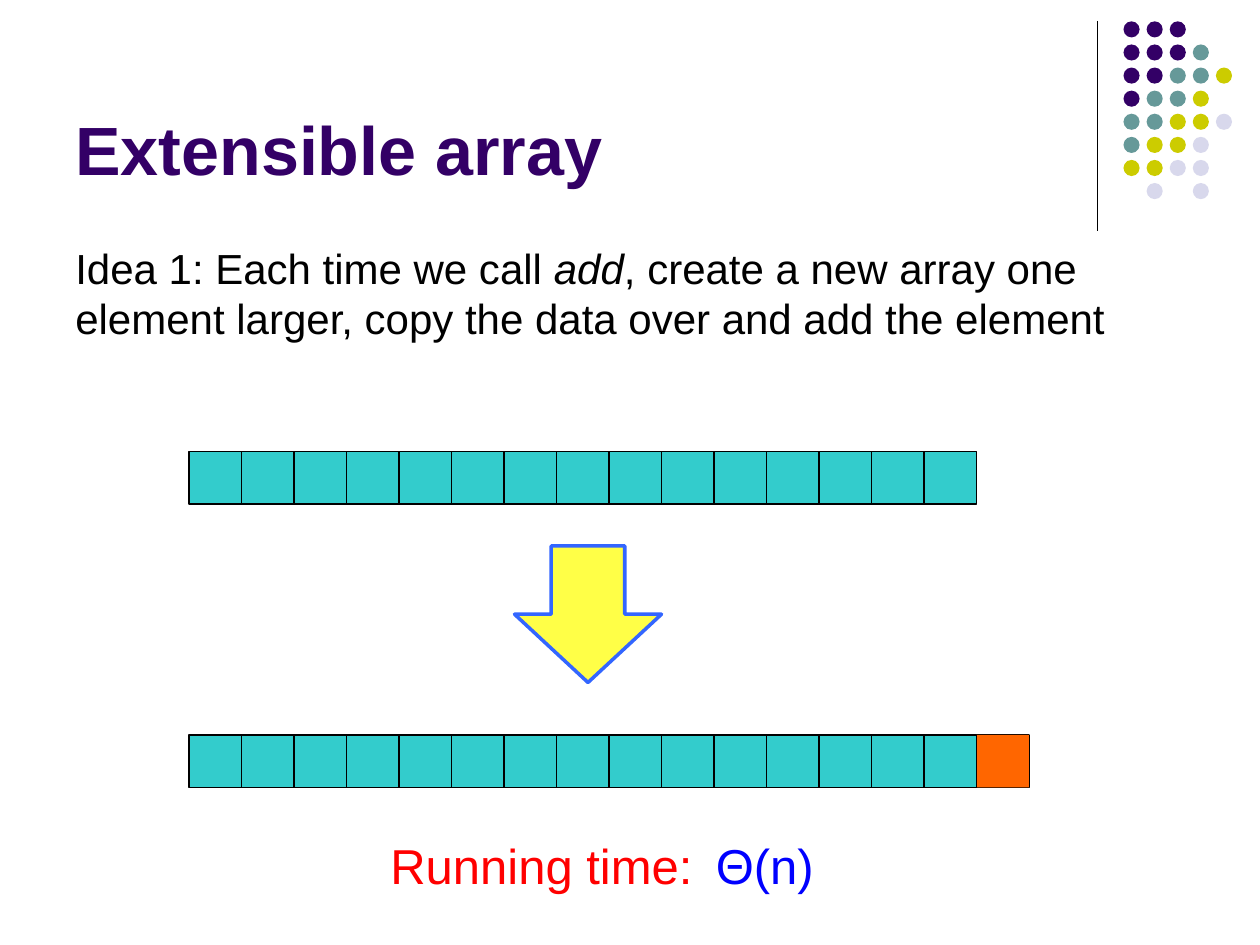
from pptx import Presentation
from pptx.dml.color import RGBColor
from pptx.enum.shapes import MSO_CONNECTOR, MSO_SHAPE
from pptx.enum.text import MSO_ANCHOR
from pptx.oxml.ns import qn
from pptx.util import Pt
from lxml import etree

STRAIGHT = MSO_CONNECTOR.STRAIGHT
RECTANGLE = MSO_SHAPE.RECTANGLE
ELLIPSE = MSO_SHAPE.OVAL
DOWN_ARROW = MSO_SHAPE.DOWN_ARROW
TOP, BOTTOM = MSO_ANCHOR.TOP, MSO_ANCHOR.BOTTOM

BLACK, PURPLE, TEAL, OLIVE, LILAC = "000000", "330066", "669999", "CCCC00", "D8D8EC"
TURQUOISE, ORANGE, YELLOW, BLUE = "33CCCC", "FF6600", "FFFF47", "3366FF"

DOT_COLOURS = {"P": PURPLE, "T": TEAL, "O": OLIVE, "L": LILAC}
DOT_ROWS = ["PPP", "PPPT", "PPTTO", "PTTO", "TTOOL", "TOOL", "OOLL", ".L.L"]
DOT_LEFT, DOT_TOP, DOT_STEP, DOT_SIZE = 642, 12.2, 13.2, 9.2

CELL = 30
ARRAY_LEFT = 108
OLD_COUNT = 15


def colour(hex_string):
    return RGBColor.from_string(hex_string)


class SlideBuilder:
    """Holds the text style and the page that elements are added to."""

    font = "Arial"

    def __init__(self, page):
        self.page = page
        self.shapes = page.shapes

    def group(self):
        return self.page.shapes.add_group_shape().shapes

    def shape(self, kind, left, top, width, height, fill, line=None, weight=0.75, within=None):
        shapes = within or self.shapes
        item = shapes.add_shape(kind, Pt(left), Pt(top), Pt(width), Pt(height))
        item.shadow.inherit = False
        item.fill.solid()
        item.fill.fore_color.rgb = colour(fill)
        if line:
            item.line.color.rgb = colour(line)
            item.line.width = Pt(weight)
        else:
            item.line.fill.background()

    def vertical_line(self, x, top, height, within=None):
        shapes = within or self.shapes
        line = shapes.add_connector(STRAIGHT, Pt(x), Pt(top), Pt(x), Pt(top + height))
        line.line.color.rgb = colour(BLACK)
        line.line.width = Pt(0.75)
        etree.SubElement(line._element.spPr, qn("a:effectLst"))

    def text(self, left, top, width, height, spans, size, ink, anchor=TOP, space_before=0):
        """Add one paragraph; spans are pairs of wording and font settings."""
        box = self.shapes.add_textbox(Pt(left), Pt(top), Pt(width), Pt(height))
        box.text_frame.word_wrap = True
        box.text_frame.vertical_anchor = anchor
        para = box.text_frame.paragraphs[0]
        para.space_before = Pt(space_before)
        for wording, extra in spans:
            span = para.add_run()
            span.text = wording
            for name, value in {"name": self.font, "size": Pt(size), **extra}.items():
                setattr(span.font, name, value)
            span.font.color.rgb = colour(ink)

    def array(self, top, count, last_fill=None):
        """Draw a row of cells, with the last one in its own fill if given."""
        cells = self.group()
        self.shape(RECTANGLE, ARRAY_LEFT, top, count * CELL, CELL, TURQUOISE, BLACK, within=cells)
        if last_fill:
            last_left = ARRAY_LEFT + (count - 1) * CELL
            self.shape(RECTANGLE, last_left, top, CELL, CELL, last_fill, within=cells)
        for index in range(1, count):
            self.vertical_line(ARRAY_LEFT + index * CELL, top, CELL, cells)

    def dot_pattern(self):
        dots = self.group()
        for row, letters in enumerate(DOT_ROWS):
            for column, letter in enumerate(letters):
                if letter in DOT_COLOURS:
                    self.shape(ELLIPSE, DOT_LEFT + column * DOT_STEP, DOT_TOP + row * DOT_STEP,
                               DOT_SIZE, DOT_SIZE, DOT_COLOURS[letter], within=dots)


def main():
    deck = Presentation()
    deck.slide_width, deck.slide_height = Pt(720), Pt(540)
    builder = SlideBuilder(deck.slides.add_slide(deck.slide_layouts[6]))

    builder.vertical_line(627, 12, 120)
    builder.dot_pattern()
    builder.text(36, 9.5, 594, 102, [("Extensible array", {"bold": True})], 39, PURPLE, BOTTOM)
    idea = [
        ("Idea 1: Each time we call ", {}),
        ("add", {"italic": True}),
        (", create a new array one element larger, copy the data over and add the element", {}),
    ]
    builder.text(36, 135, 648, 122.5, idea, 24, BLACK, space_before=4.8)

    builder.array(258, OLD_COUNT)
    builder.shape(DOWN_ARROW, 294, 312, 84, 78, YELLOW, BLUE, 2)
    builder.array(420, OLD_COUNT + 1, ORANGE)

    builder.text(216, 474, 192, 41, [("Running time:", {})], 28, "FF0000")
    builder.text(402, 474, 72, 41, [("Θ(n)", {})], 28, "0000FF")
    deck.save("out.pptx")


if __name__ == "__main__":
    main()
